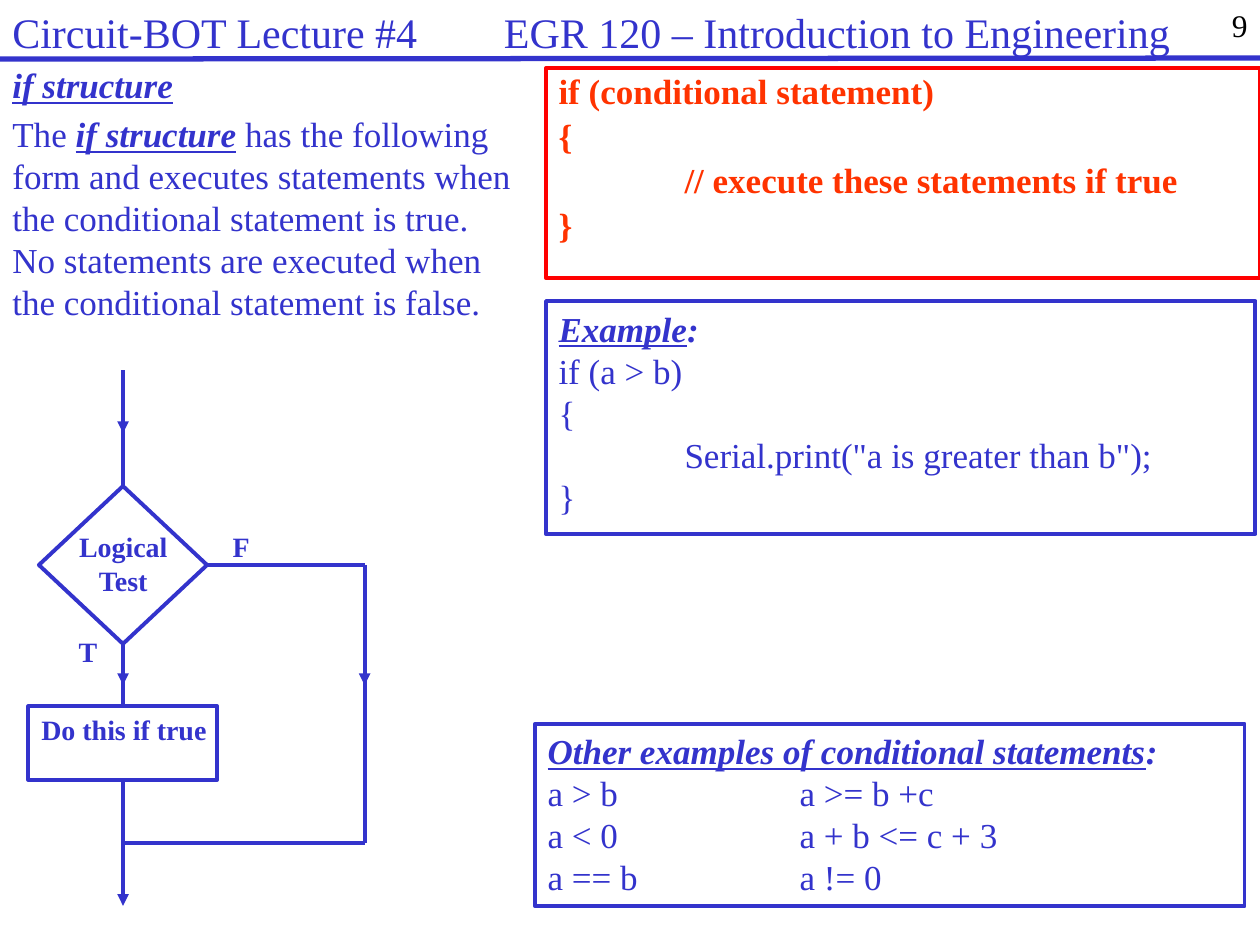
from lxml import etree
from pptx import Presentation
from pptx.dml.color import RGBColor
from pptx.enum.shapes import MSO_CONNECTOR, MSO_SHAPE
from pptx.enum.text import MSO_ANCHOR, PP_ALIGN
from pptx.oxml.ns import qn
from pptx.util import Cm, Pt

FONT = "Times New Roman"
BLUE, RED, ORANGE, BLACK = "3333CC", "FF0000", "FF3300", "000000"


def color(hex_text):
    return RGBColor.from_string(hex_text)


def add_tab_stop(para, position):
    stops = etree.SubElement(para._p.get_or_add_pPr(), qn("a:tabLst"))
    etree.SubElement(stops, qn("a:tab"), pos=str(Cm(position)), algn="l")


def write(shape, paragraphs, size=20, ink=BLUE, bold=False, align=PP_ALIGN.LEFT,
          wrap=True, before=0, spacing=None, tab=None):
    """Fill a shape; each paragraph lists spans as (text, styles), styles from "biu"."""
    frame = shape.text_frame
    frame.word_wrap = wrap
    frame.vertical_anchor = MSO_ANCHOR.TOP
    for index, spans in enumerate(paragraphs):
        para = frame.add_paragraph() if index else frame.paragraphs[0]
        para.alignment = align
        para.space_before = Pt(before)
        if spacing:
            para.line_spacing = spacing
        if tab:
            add_tab_stop(para, tab)
        para.font.name, para.font.size, para.font.bold = FONT, Pt(size), bold
        para.font.color.rgb = color(ink)
        for text, styles in spans:
            span = para.add_run()
            span.text = text
            if styles:
                span.font.bold = "b" in styles
                span.font.italic = "i" in styles
                span.font.underline = "u" in styles


def plain(*lines):
    return [[(line, "")] for line in lines]


def add_text(page, box, paragraphs, **style):
    write(page.shapes.add_textbox(*map(Cm, box)), paragraphs, **style)


def add_outline(page, kind, box, line=BLUE):
    shape = page.shapes.add_shape(kind, *map(Cm, box))
    shape.shadow.inherit = False
    shape.fill.background()
    shape.line.color.rgb = color(line)
    shape.line.width = Pt(2.25)
    return shape


def add_line(page, start, end, arrow=False, width=2.25):
    line = page.shapes.add_connector(MSO_CONNECTOR.STRAIGHT, *map(Cm, start + end))
    line.line.color.rgb = color(BLUE)
    line.line.width = Pt(width)
    if arrow:
        etree.SubElement(line.line._get_or_add_ln(), qn("a:tailEnd"), type="triangle")
    etree.SubElement(line._element.spPr, qn("a:effectLst"))


def add_header(page, box):
    left, top, width, height = box
    add_text(page, (left, top, width - 0.6, height),
             plain("Circuit-BOT Lecture #4\tEGR 120 – Introduction to Engineering"),
             size=24, before=4.8, tab=9.91)
    add_text(page, (left + width - 5.28, top, 5.28, 1.27), plain("9"),
             size=18, ink=BLACK, align=PP_ALIGN.RIGHT)
    add_line(page, (left, top + 1.19), (left + width, top + 1.17), width=3)


def add_explanation(page, box):
    add_text(page, box, [
        [("if structure", "biu")],
        [("The ", ""), ("if structure", "biu"),
         (" has the following form and executes statements when the conditional "
          "statement is true. No statements are executed when the conditional "
          "statement is false.", "")],
    ], before=4)


def add_syntax(page, box):
    write(add_outline(page, MSO_SHAPE.RECTANGLE, box, RED),
          plain("if (conditional statement)", "{",
                "\t// execute these statements if true", "}"),
          ink=ORANGE, bold=True, before=4, spacing=0.9, tab=2.54)


def add_example(page, box, heading, lines, tab):
    write(add_outline(page, MSO_SHAPE.RECTANGLE, box),
          [[(heading, "biu"), (":", "bi")]] + plain(*lines), tab=tab)


def add_flowchart(page, box):
    left, top, width, height = box
    middle, action_width = 1.91, 3.81
    test_top, test_width, test_height = 2.34, 3.39, 3.18
    test_middle, test_bottom = test_top + test_height / 2, test_top + test_height
    action_top, action_bottom, merge = 6.78, 8.26, 9.53
    arrow_start, arrow_tip = 6.15, 6.35

    def place(x, y):
        return left + x, top + y

    for x, start, end, arrow in [
        (middle, 0, 1.27, True),
        (middle, 1.07, test_top, False),
        (middle, test_bottom, arrow_tip, True),
        (middle, arrow_start, action_top, False),
        (middle, action_bottom, merge, False),
        (middle, merge, height, True),
        (width, test_middle, arrow_tip, True),
        (width, arrow_start, merge, False),
    ]:
        add_line(page, place(x, start), place(x, end), arrow)
    for x, y in [(middle + test_width / 2, test_middle), (middle, merge)]:
        add_line(page, place(x, y), place(width, y))

    add_outline(page, MSO_SHAPE.DIAMOND,
                place(middle - test_width / 2, test_top) + (test_width, test_height))
    add_outline(page, MSO_SHAPE.RECTANGLE,
                place(0, action_top) + (action_width, action_bottom - action_top))

    for x, y, label_width, label_height, lines in [
        (0, action_top, 3.86, 0.94, ["Do this if true"]),
        (0.76, 3.1, 2.31, 1.63, ["Logical", "Test"]),
        (0.76, 5.21, 0.89, 0.94, ["T"]),
        (3.86, 3.1, 0.86, 0.94, ["F"]),
    ]:
        add_text(page, place(x, y) + (label_width, label_height), plain(*lines),
                 size=16, bold=True, align=PP_ALIGN.CENTER, wrap=False)


def main():
    deck = Presentation()
    deck.slide_width, deck.slide_height = Cm(25.4), Cm(19.05)
    page = deck.slides.add_slide(deck.slide_layouts[6])
    add_header(page, (0, 0, 25.4, 1.09))
    add_explanation(page, (0, 1.16, 10.6, 8.69))
    add_syntax(page, (11.01, 1.37, 14.39, 4.24))
    add_flowchart(page, (0.57, 7.46, 6.78, 10.8))
    add_example(page, (11.01, 6.07, 14.3, 4.7), "Example",
                ["if (a > b)", "{", '\tSerial.print("a is greater than b");', "}"], 2.54)
    add_example(page, (10.79, 14.59, 14.3, 3.68),
                "Other examples of conditional statements",
                ["a > b\ta >= b +c", "a < 0\ta + b <= c + 3", "a == b\ta != 0"], 5.08)
    deck.save("out.pptx")


if __name__ == "__main__":
    main()
